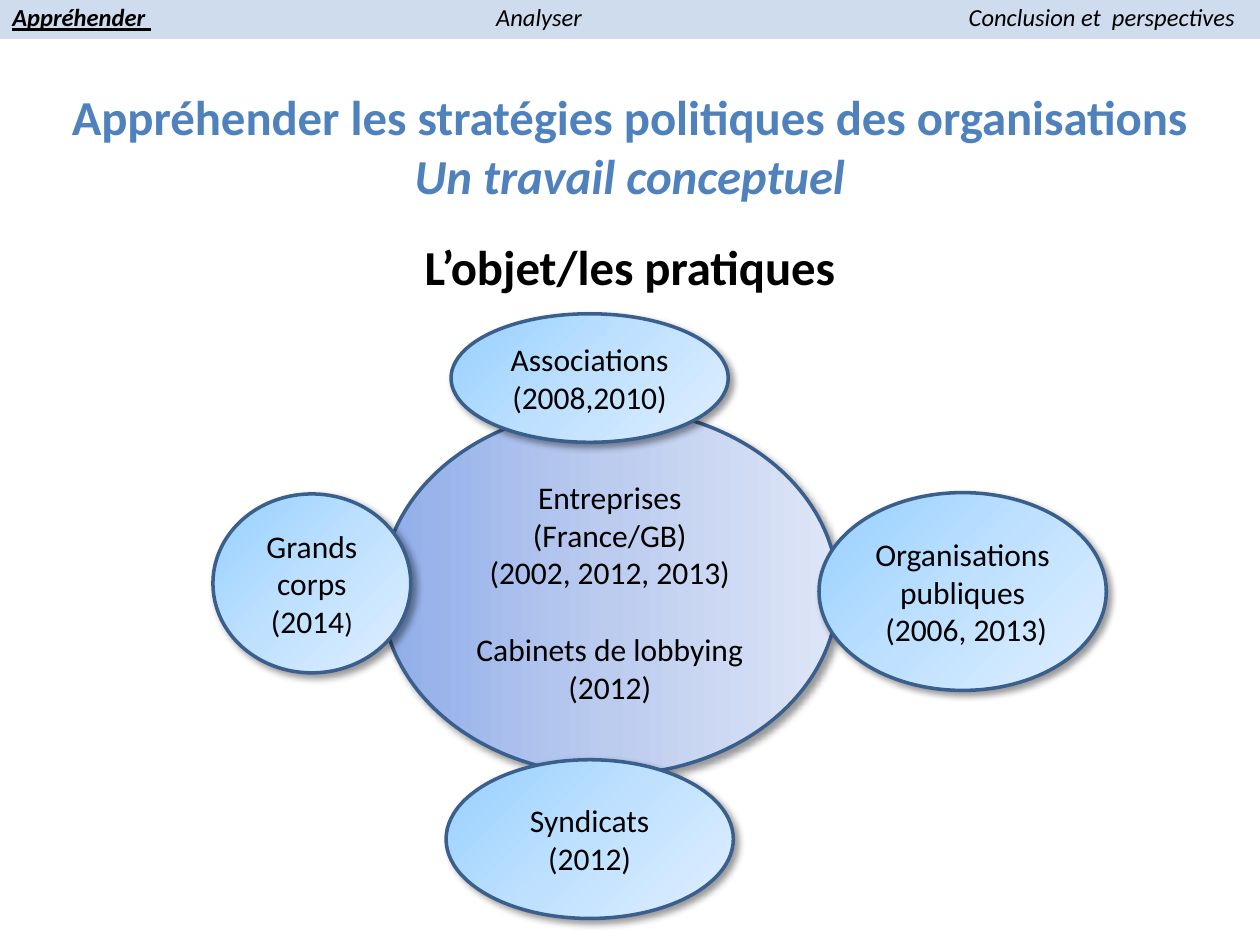
"""Build a slide mapping the organisations whose political strategies are studied."""
import copy

import lxml.etree
import pptx
import pptx.dml.color
import pptx.enum.shapes
import pptx.enum.text
import pptx.oxml.ns
import pptx.util

COLUMNS, ROWS = 100, 75
qn = pptx.oxml.ns.qn
Pt = pptx.util.Pt
SHAPE = pptx.enum.shapes.MSO_SHAPE
CENTER = pptx.enum.text.PP_ALIGN.CENTER
LEFT = pptx.enum.text.PP_ALIGN.LEFT
TOP = pptx.enum.text.MSO_ANCHOR.TOP
MIDDLE = pptx.enum.text.MSO_ANCHOR.MIDDLE

deck = pptx.Presentation()
deck.slide_width = pptx.util.Inches(10)
deck.slide_height = pptx.util.Inches(7.5)
slide = deck.slides.add_slide(deck.slide_layouts[6])


def rgb(code):
    return pptx.dml.color.RGBColor.from_string(code)


def cells(left, top, width, height):
    column, row = deck.slide_width / COLUMNS, deck.slide_height / ROWS
    return [round(n * unit) for n, unit in zip((left, top, width, height), (column, row) * 2)]


heading = slide.shapes.add_textbox(*cells(0, 6.9, COLUMNS, 17)).text_frame
heading.word_wrap = True
heading.vertical_anchor = TOP
heading.margin_top = heading.margin_bottom = 0
heading.text = (
    "Appréhender les stratégies politiques des organisations\n"
    "Un travail conceptuel\n"
    "L’objet/les pratiques"
)
heading_looks = [("4F81BD", False, 0), ("4F81BD", True, 0), ("000000", False, 18.5)]
for line, (tint, slanted, gap) in zip(heading.paragraphs, heading_looks):
    line.alignment = CENTER
    line.space_before = Pt(gap)
    font = line.runs[0].font
    font.name, font.size, font.bold, font.italic = "Calibri", Pt(27.9), True, slanted
    font.color.rgb = rgb(tint)

progress = slide.shapes.add_shape(SHAPE.RECTANGLE, *cells(0, -0.3, COLUMNS, 3.4))
progress.shadow.inherit = False
progress.line.fill.background()
progress.fill.solid()
progress.fill.fore_color.rgb = rgb("4F81BD")
bar_colour = progress.fill._xPr.find(".//" + qn("a:srgbClr"))
lxml.etree.SubElement(bar_colour, qn("a:alpha"), val="27000")
progress.text_frame.vertical_anchor = TOP
steps = progress.text_frame.paragraphs[0]
steps.alignment = LEFT
for index, step in enumerate(["Appréhender ", "\tAnalyser", "\tConclusion et  perspectives"]):
    run = steps.add_run()
    run.text = step
    font = run.font
    font.name, font.size, font.italic = "Calibri", Pt(14), True
    font.bold = font.underline = index == 0
    font.color.rgb = rgb("000000")
tab_stops = lxml.etree.SubElement(steps._p.get_or_add_pPr(), qn("a:tabLst"))
for column in (38.4, 75.9):
    position = cells(column, 0, 0, 0)[0]
    lxml.etree.SubElement(tab_stops, qn("a:tab"), pos=str(position), algn="l")

core_blend = ["8FADE9", "BCCCEF", "DEE6F7"]
satellite_blend = ["96D0FF", "BFE1FF", "E0EFFF"]
organisations = [
    ((30.3, 32.4, 36.2, 29.1), core_blend, 0,
     "Entreprises (France/GB)\n(2002, 2012, 2013)\nCabinets de lobbying\n(2012)"),
    ((65, 39.1, 22.8, 15.7), satellite_blend, 315, "Organisations publiques\n (2006, 2013)"),
    ((35.4, 60.3, 22.8, 12.6), satellite_blend, 315, "Syndicats\n(2012)"),
    ((35.8, 24.9, 22, 10.2), satellite_blend, 315, "Associations (2008,2010)"),
    ((16.9, 39.2, 15.7, 14.2), satellite_blend, 315, "Grands corps\n(2014"),
]
for area, blend, angle, label in organisations:
    group = slide.shapes.add_shape(SHAPE.OVAL, *cells(*area))
    group.fill.gradient()
    group.fill.gradient_angle = angle
    stop_list = group._element.spPr.find(".//" + qn("a:gsLst"))
    stop_list.insert(1, copy.deepcopy(stop_list[0]))
    for share, stop, tint in zip((0, 0.5, 1), group.fill.gradient_stops, blend):
        stop.position = share
        stop.color.rgb = rgb(tint)
    group.line.color.rgb = rgb("3A5F8C")
    group.line.width = Pt(2)
    group.shadow.inherit = False
    effects = group._element.spPr.find(qn("a:effectLst"))
    shade = lxml.etree.SubElement(
        effects, qn("a:outerShdw"), blurRad=str(Pt(4)), dist=str(Pt(3)),
        dir=str(45 * 60000), algn="tl", rotWithShape="0")
    shade_colour = lxml.etree.SubElement(shade, qn("a:srgbClr"), val="000000")
    lxml.etree.SubElement(shade_colour, qn("a:alpha"), val="40000")

    group.text_frame.word_wrap = True
    group.text_frame.vertical_anchor = MIDDLE
    group.text_frame.text = label
    if label.startswith("Grands"):
        group.text_frame.paragraphs[-1].add_run().text = ")"
    for line in group.text_frame.paragraphs:
        line.alignment = CENTER
        if line.text.startswith("Cabinets"):
            line.space_before = Pt(22)
        for run in line.runs:
            run.font.name = "Calibri"
            run.font.size = Pt(16 if run.text == ")" else 18)
            run.font.color.rgb = rgb("000000")

deck.save("out.pptx")
